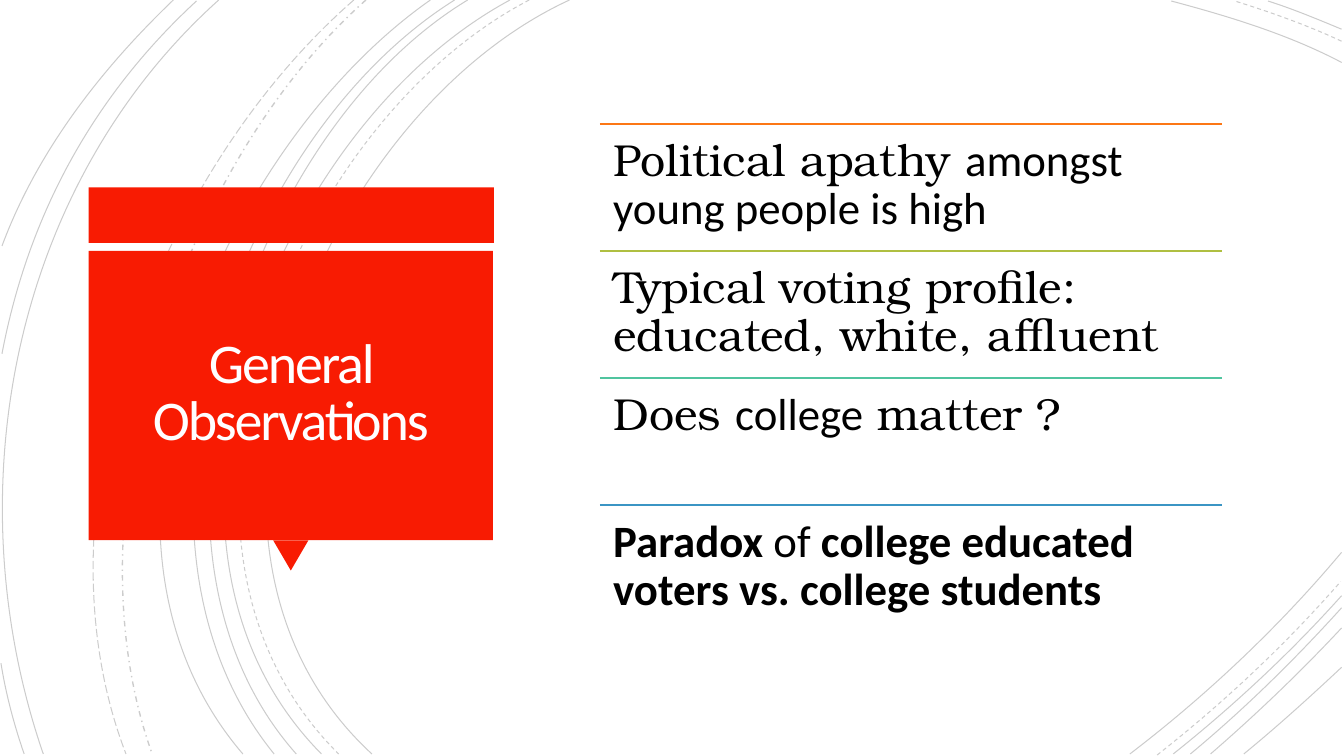
from pptx import Presentation, util as u
from pptx.dml.color import RGBColor
from pptx.enum import dml, shapes, text
from pptx.oxml.ns import qn
from lxml import etree

# Content
TITLE = "General Observations"
SERIF, SANS = "TeX Gyre Bonum", "Calibri"
HARD_SPACE = chr(160)
# Each observation: rule colour, then runs of (words, font, bold)
OBSERVATIONS = [
    ("FC7715", [("Political apathy ", SERIF, False),
                ("amongst young people is high", SANS, False)]),
    ("AFBF41", [(f"Typical voting profile: educated, white,{HARD_SPACE}affluent",
                 SERIF, False)]),
    ("50C49F", [("Does ", SERIF, False), ("college", SANS, False),
                (" matter ?", SERIF, False)]),
    ("3B95C4", [("Paradox", SANS, True), (" of ", SANS, False),
                ("college educated voters vs. college students", SANS, True)]),
]

# Background arcs: dash, then start, two control points and end (in grid units)
SOLID, DASH = dml.MSO_LINE.SOLID, dml.MSO_LINE.DASH
DASH_DOT, LONG_DASH = dml.MSO_LINE.DASH_DOT, dml.MSO_LINE.LONG_DASH
ARCS = [
    (SOLID, (5.65, 0), (3.15, 1.15), (1.43, 5.4), (3.69, 7.48)),
    (SOLID, (13.31, 0.62), (12.78, 0.34), (12.18, 0.16), (11.62, 0.01)),
    (SOLID, (11.21, 7.48), (11.97, 6.9), (12.69, 6.22), (13.31, 5.48)),
    (DASH, (5.25, 0), (2.85, 1.25), (1.23, 5.37), (3.36, 7.48)),
    (DASH, (13.31, 0.41), (12.97, 0.25), (12.6, 0.12), (12.25, 0.01)),
    (DASH, (11.48, 7.49), (12.13, 6.98), (12.75, 6.4), (13.3, 5.77)),
    (SOLID, (5.06, 0), (2.7, 1.27), (1.1, 5.37), (3.19, 7.48)),
    (SOLID, (13.31, 0.29), (13.07, 0.19), (12.83, 0.09), (12.58, 0.01)),
    (SOLID, (11.64, 7.48), (12.23, 7.01), (12.8, 6.48), (13.31, 5.91)),
    (SOLID, (4.64, 0), (2.44, 1.33), (1.1, 5.41), (2.94, 7.48)),
    (SOLID, (11.81, 7.48), (12.34, 7.04), (12.84, 6.55), (13.31, 6.03)),
    (SOLID, (4.51, 0), (2.31, 1.38), (0.97, 5.33), (2.72, 7.48)),
    (SOLID, (12.01, 7.48), (12.46, 7.09), (12.9, 6.67), (13.31, 6.23)),
    (SOLID, (4.27, 0), (2.17, 1.47), (0.53, 5.29), (2.41, 7.48)),
    (SOLID, (12.34, 7.48), (12.67, 7.21), (12.99, 6.92), (13.31, 6.62)),
    (DASH_DOT, (3.63, 0), (1.76, 1.66), (0.65, 5.09), (1.51, 7.48)),
    (LONG_DASH, (3.51, 0), (1.57, 1.69), (0.29, 4.99), (1.25, 7.48)),
    (SOLID, (2.17, 0), (0.11, 1.85), (-0.46, 4.9), (0.43, 7.48)),
    (SOLID, (1.95, 0.01), (0.92, 0.96), (0.28, 2.14), (0.02, 3.51)),
    (SOLID, (0.01, 6.58), (0.06, 6.89), (0.14, 7.19), (0.24, 7.48)),
    (SOLID, (1.72, 0), (1, 0.69), (0.37, 1.5), (0.02, 2.44)),
]

THEME = {
    "panel": "F81B02", "title": "FFFEFF", "body": "000000", "arc": "000000",
    "arc_opacity": 20, "title_size": 40, "body_size": 32,
    "arc_width": 0.75, "dash_dot_width": 1, "rule_width": 1.25,
}

# Layout, in grid units of 2.54 cm
UNIT = 2.54
PANEL = [
    (shapes.MSO_SHAPE.RECTANGLE, (0.88, 1.86, 4.02, 0.55), 0),
    (shapes.MSO_SHAPE.ISOSCELES_TRIANGLE, (2.71, 5.36, 0.35, 0.3), 180),
    (shapes.MSO_SHAPE.RECTANGLE, (0.88, 2.49, 4.01, 2.87), 0),
]
TITLE_BOX = (0.97, 2.57, 3.83, 2.69)
LIST_LEFT, LIST_TOP, LIST_WIDTH, ROW = 5.95, 1.23, 6.17, 1.26
TITLE_INSET, LIST_INSET = u.Cm(0.64), u.Cm(0.34)


def grid(*values):
    return [u.Cm(UNIT * value) for value in values]


def rgb(key):
    return RGBColor.from_string(THEME.get(key, key))


def add_arc(slide, dash, *points):
    start, *rest = [grid(*point) for point in points]
    builder = slide.shapes.build_freeform(*start)
    builder.add_line_segments(rest, close=False)
    arc = builder.convert_to_shape()
    # Join the three segments into one cubic curve
    segments = list(arc._element.iter(qn("a:lnTo")))
    curve = etree.SubElement(segments[0].getparent(), qn("a:cubicBezTo"))
    for segment in segments:
        curve.append(segment[0])
        segment.getparent().remove(segment)
    arc.shadow.inherit = False
    arc.fill.background()
    arc.line.color.rgb = rgb("arc")
    arc.line.width = u.Pt(THEME["dash_dot_width" if dash == DASH_DOT else "arc_width"])
    arc.line.dash_style = dash
    for colour in arc.line._ln.iter(qn("a:srgbClr")):
        etree.SubElement(colour, qn("a:alpha"), val=str(THEME["arc_opacity"] * 1000))


def add_words(slide, box, runs, inset, spacing, size, colour):
    frame = slide.shapes.add_textbox(*grid(*box)).text_frame
    frame.word_wrap = True
    frame.margin_left = frame.margin_top = inset
    frame.margin_right = frame.margin_bottom = inset
    paragraph = frame.paragraphs[0]
    paragraph.line_spacing = spacing
    for words, font, bold in runs:
        run = paragraph.add_run()
        run.text = words
        run.font.name, run.font.bold = font, bold
        run.font.size = u.Pt(THEME[size])
        run.font.color.rgb = rgb(colour)
    return frame


def add_rule(slide, top, colour):
    rule = slide.shapes.add_connector(
        shapes.MSO_CONNECTOR.STRAIGHT, *grid(LIST_LEFT, top, LIST_LEFT + LIST_WIDTH, top))
    rule.line.color.rgb = rgb(colour)
    rule.line.width = u.Pt(THEME["rule_width"])
    etree.SubElement(rule._element.spPr, qn("a:effectLst"))


def main():
    deck = Presentation()
    deck.slide_width, deck.slide_height = grid(40 / 3, 7.5)
    slide = deck.slides.add_slide(deck.slide_layouts[6])

    # Background arcs
    for arc in ARCS:
        add_arc(slide, *arc)

    # Red title panel with its pointer
    for kind, box, rotation in PANEL:
        part = slide.shapes.add_shape(kind, *grid(*box))
        part.rotation = rotation
        part.shadow.inherit = False
        part.fill.solid()
        part.fill.fore_color.rgb = rgb("panel")
        part.line.fill.background()
    title = add_words(slide, TITLE_BOX, [(TITLE, SANS, False)], TITLE_INSET, 0.85,
                      "title_size", "title")
    title.vertical_anchor = text.MSO_ANCHOR.MIDDLE
    title.paragraphs[0].alignment = text.PP_ALIGN.CENTER
    title.paragraphs[0].runs[0].font._element.set("spc", "-150")

    # Observations, one per row under a coloured rule
    for row, (colour, runs) in enumerate(OBSERVATIONS):
        top = LIST_TOP + row * ROW
        add_rule(slide, top, colour)
        add_words(slide, (LIST_LEFT, top, LIST_WIDTH, ROW), runs, LIST_INSET, 0.9,
                  "body_size", "body")

    deck.save("out.pptx")


if __name__ == "__main__":
    main()
